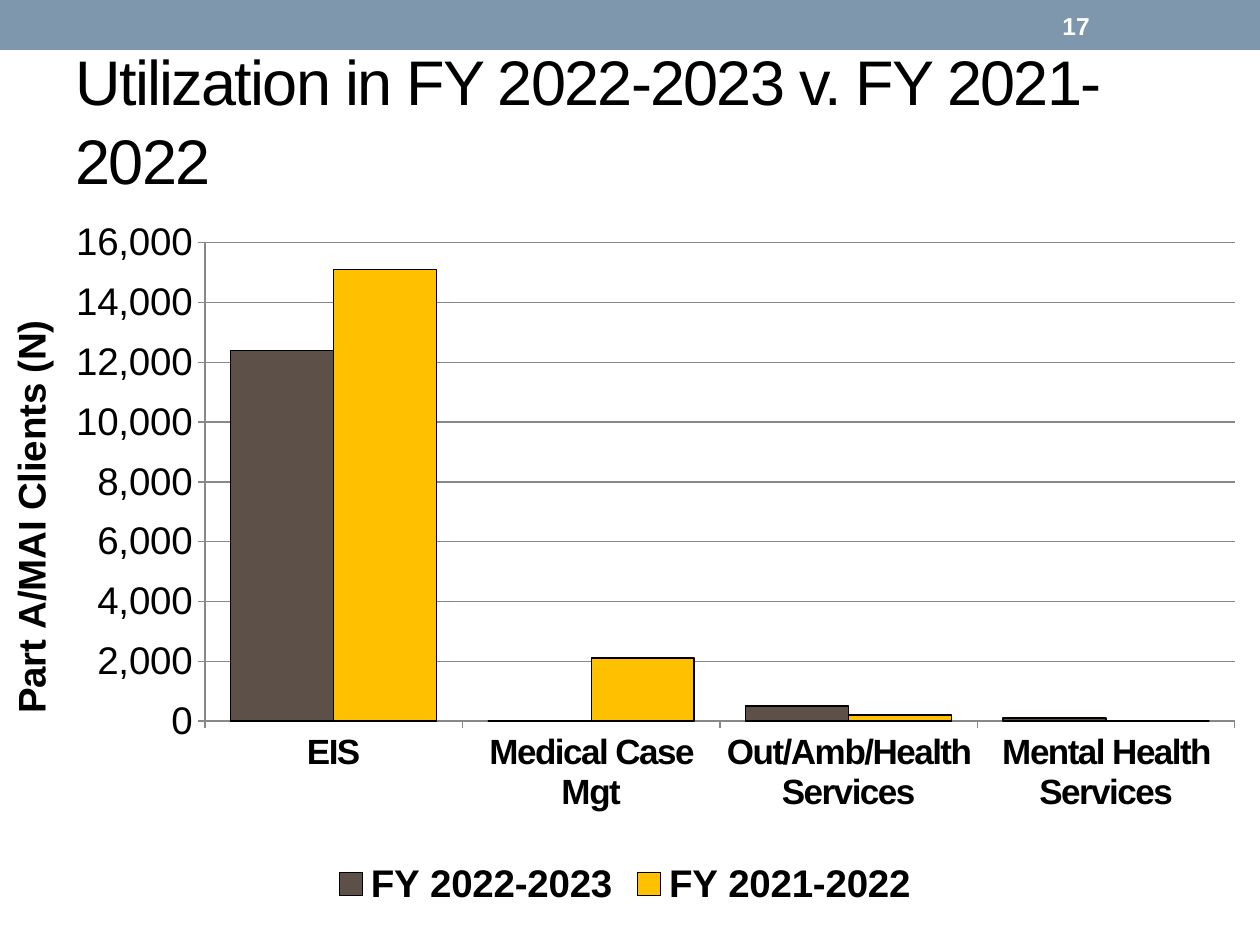
from dataclasses import dataclass

from lxml import etree
from pptx import Presentation
from pptx.chart.data import CategoryChartData
from pptx.dml.color import RGBColor as RGB
from pptx.enum.chart import XL_CHART_TYPE as ChartType
from pptx.enum.chart import XL_LEGEND_POSITION as LegendPosition
from pptx.enum.chart import XL_TICK_MARK as TickMark
from pptx.enum.shapes import MSO_SHAPE as Shape
from pptx.enum.text import MSO_ANCHOR as Anchor
from pptx.enum.text import MSO_AUTO_SIZE as AutoSize
from pptx.enum.text import PP_ALIGN as Align
from pptx.oxml.ns import qn
from pptx.util import Emu, Pt


@dataclass(frozen=True)
class Theme:
    font: str = "Arial"
    ink: RGB = RGB(0, 0, 0)
    white: RGB = RGB(255, 255, 255)
    band: RGB = RGB(0x7E, 0x97, 0xAD)
    grid: RGB = RGB(0x88, 0x88, 0x88)
    current: RGB = RGB(0x5C, 0x50, 0x48)
    previous: RGB = RGB(0xFF, 0xC0, 0x00)
    title_size: Pt = Pt(36)
    number_size: Pt = Pt(14)
    chart_size: Pt = Pt(22)
    category_size: Pt = Pt(20)


theme = Theme()
EMU_PER_PX = 914400 / 126


def px(*lengths):
    return [Emu(round(length * EMU_PER_PX)) for length in lengths]


def style(font, size, color, bold=False):
    font.name, font.size, font.bold = theme.font, size, bold
    font.color.rgb = color


deck = Presentation()
deck.slide_width, deck.slide_height = px(1260, 945)
page = deck.slides.add_slide(deck.slide_layouts[5])

# Top band
band = page.shapes.add_shape(Shape.RECTANGLE, *px(0, 0, 1260, 50))
band.shadow.inherit = False
band.fill.solid()
band.fill.fore_color.rgb = theme.band
band.line.fill.background()

# Title
title = page.shapes.title
title.left, title.top, title.width, title.height = px(63, 50, 1134, 136)
frame = title.text_frame
frame.text = "Utilization in FY 2022-2023 v. FY 2021-2022"
frame.auto_size = AutoSize.NONE
frame.vertical_anchor = Anchor.MIDDLE
para = frame.paragraphs[0]
para.alignment = Align.LEFT
para.line_spacing = 1.05
style(para.font, theme.title_size, theme.ink)
para.runs[0].font._element.set("spc", "-100")

# Page number
number = page.shapes.add_textbox(*px(1050, 3, 147, 45))
frame = number.text_frame
frame.word_wrap = True
frame.vertical_anchor = Anchor.MIDDLE
frame.text = "17"
style(frame.paragraphs[0].font, theme.number_size, theme.white, bold=True)

# Chart data
data = CategoryChartData(number_format="#,##0")
data.categories = ["EIS", "Medical Case Mgt", "Out/Amb/Health Services",
                   "Mental Health Services"]
data.add_series("FY 2022-2023", [12400, 0, 500, 100])
data.add_series("FY 2021-2022", [15100, 2100, 200, 0])
chart = page.shapes.add_chart(
    ChartType.COLUMN_CLUSTERED, *px(0, 220, 1250, 693), data).chart
chart.has_title = False
style(chart.font, theme.chart_size, theme.ink)

# Columns
plot = chart.plots[0]
plot.gap_width, plot.overlap = 50, 0
plot.vary_by_categories = False
for series, color in zip(plot.series, (theme.current, theme.previous)):
    series.format.fill.solid()
    series.format.fill.fore_color.rgb = color
    series.format.line.color.rgb = theme.ink
    series.format.line.width = Pt(0.75)

# Axes
category_axis, value_axis = chart.category_axis, chart.value_axis
for axis in (category_axis, value_axis):
    axis.major_tick_mark = TickMark.OUTSIDE
    axis.minor_tick_mark = TickMark.NONE
    axis.format.line.color.rgb = theme.grid
style(category_axis.tick_labels.font, theme.category_size, theme.ink, bold=True)
for properties in category_axis._element.iter(qn("a:defRPr")):
    properties.set("spc", "-100")
value_axis.minimum_scale, value_axis.maximum_scale = 0, 16000
value_axis.major_unit = 2000
value_axis.tick_labels.number_format = "#,##0"
value_axis.tick_labels.number_format_is_linked = False
value_axis.has_major_gridlines = True
value_axis.major_gridlines.format.line.color.rgb = theme.grid
frame = value_axis.axis_title.text_frame
frame.text = "Part A/MAI Clients (N)"
style(frame.paragraphs[0].font, theme.chart_size, theme.ink, bold=True)

# Legend
chart.has_legend = True
chart.legend.position = LegendPosition.BOTTOM
chart.legend.include_in_layout = False
style(chart.legend.font, theme.chart_size, theme.ink, bold=True)

# Fixed inner plot area
plot_area = chart._chartSpace.find(".//" + qn("c:plotArea"))
layout = plot_area.find(qn("c:layout"))
if layout is None:
    layout = etree.Element(qn("c:layout"))
    plot_area.insert(0, layout)
manual = etree.SubElement(layout, qn("c:manualLayout"))
for tag, value in (("layoutTarget", "inner"), ("xMode", "edge"),
                   ("yMode", "edge"), ("x", "0.164"), ("y", "0.033"),
                   ("w", "0.824"), ("h", "0.69")):
    etree.SubElement(manual, qn("c:" + tag)).set("val", value)

deck.save("out.pptx")
